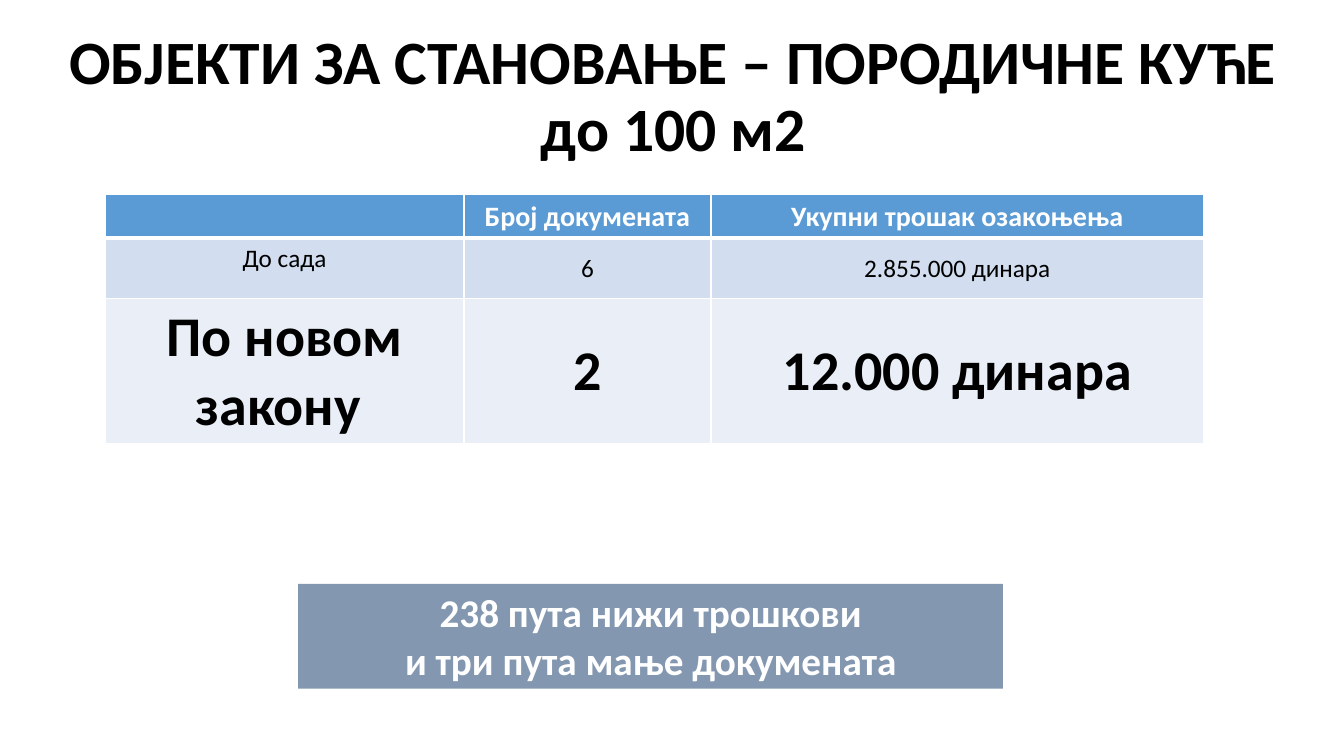
from dataclasses import dataclass

import lxml.etree
import pptx
import pptx.dml.color
import pptx.enum.shapes
import pptx.enum.text
import pptx.oxml.ns
import pptx.util

Pt = pptx.util.Pt
ALIGN = pptx.enum.text.PP_ALIGN
ANCHOR = pptx.enum.text.MSO_ANCHOR


@dataclass(frozen=True)
class Theme:
    font: str = "Calibri"
    black: str = "000000"
    white: str = "FFFFFF"
    header: str = "5B9BD5"
    band_dark: str = "D2DEEF"
    band_light: str = "EAEFF7"
    banner: str = "8497B0"
    title_size: int = 44
    header_size: int = 20
    body_size: int = 18
    emphasis_size: int = 40
    banner_size: int = 28


THEME = Theme()


def rgb(color):
    return pptx.dml.color.RGBColor.from_string(color)


def write_text(frame, text, *, size, color=THEME.black, bold=False,
               anchor=ANCHOR.MIDDLE, line_spacing=None):
    """Each newline starts a paragraph; a vertical tab is a line break."""
    frame.word_wrap = True
    frame.vertical_anchor = anchor
    for index, line in enumerate(text.split("\n")):
        paragraph = frame.add_paragraph() if index else frame.paragraphs[0]
        paragraph.text = line
        paragraph.alignment = ALIGN.CENTER
        paragraph.line_spacing = line_spacing
        for run in paragraph.runs:
            run.font.name = THEME.font
            run.font.size = Pt(size)
            run.font.bold = bold
            run.font.color.rgb = rgb(color)


def add_title(slide, text, left, top, width, height):
    box = slide.shapes.add_textbox(Pt(left), Pt(top), Pt(width), Pt(height))
    write_text(box.text_frame, text, size=THEME.title_size, bold=True,
               line_spacing=0.9)


def set_borders(cell, **widths):
    properties = cell._tc.get_or_add_tcPr()
    qn = pptx.oxml.ns.qn
    for side in ("L", "R", "T", "B"):
        line = lxml.etree.SubElement(properties, qn(f"a:ln{side}"),
                                     w=str(Pt(widths.get(side, 1))))
        fill = lxml.etree.SubElement(line, qn("a:solidFill"))
        lxml.etree.SubElement(fill, qn("a:srgbClr"), val=THEME.white)


def add_cost_table(slide, rows, left, top, column_widths, row_heights):
    table = slide.shapes.add_table(
        len(rows), len(column_widths), Pt(left), Pt(top),
        Pt(sum(column_widths)), Pt(sum(row_heights))).table
    for column, width in zip(table.columns, column_widths):
        column.width = Pt(width)
    for row, height in zip(table.rows, row_heights):
        row.height = Pt(height)

    header_style = dict(size=THEME.header_size, color=THEME.white, bold=True)
    styles = [(THEME.header, header_style),
              (THEME.band_dark, dict(size=THEME.body_size)),
              (THEME.band_light, dict(size=THEME.emphasis_size, bold=True))]
    for row_index, (texts, (fill, style)) in enumerate(zip(rows, styles)):
        for column_index, text in enumerate(texts):
            cell = table.cell(row_index, column_index)
            # The header is set off by a thick rule
            set_borders(cell, T=3 if row_index == 1 else 1,
                        B=3 if row_index == 0 else 1)
            cell.fill.solid()
            cell.fill.fore_color.rgb = rgb(fill)
            at_top = row_index == 0 or column_index == 0
            cell.vertical_anchor = ANCHOR.TOP if at_top else ANCHOR.MIDDLE
            write_text(cell.text_frame, text, anchor=cell.vertical_anchor,
                       **style)


def add_banner(slide, text, left, top, width, height):
    shape = slide.shapes.add_shape(pptx.enum.shapes.MSO_SHAPE.RECTANGLE,
                                   Pt(left), Pt(top), Pt(width), Pt(height))
    shape.shadow.inherit = False
    shape.fill.solid()
    shape.fill.fore_color.rgb = rgb(THEME.banner)
    shape.line.fill.background()
    write_text(shape.text_frame, text, size=THEME.banner_size,
               color=THEME.white, bold=True, anchor=ANCHOR.TOP)


def main():
    presentation = pptx.Presentation()
    presentation.slide_width = Pt(960)
    presentation.slide_height = Pt(540)
    slide = presentation.slides.add_slide(presentation.slide_layouts[6])

    # Title
    add_title(slide, "ОБЈЕКТИ ЗА СТАНОВАЊЕ – ПОРОДИЧНЕ КУЋЕ\vдо 100 м2",
              40, 21, 882, 98)

    # Costs before and after the new law
    rows = [("", "Број докумената", "Укупни трошак озакоњења"),
            ("До сада", "6", "2.855.000 динара"),
            ("По новом закону ", "2", "12.000 динара")]
    add_cost_table(slide, rows, 75.2, 139,
                   column_widths=(256.2, 176.4, 352),
                   row_heights=(31, 43, 104))

    # Conclusion
    add_banner(slide, "238 пута нижи трошкови\nи три пута мање докумената",
               213, 417, 503.5, 75)

    presentation.save("out.pptx")


if __name__ == "__main__":
    main()
